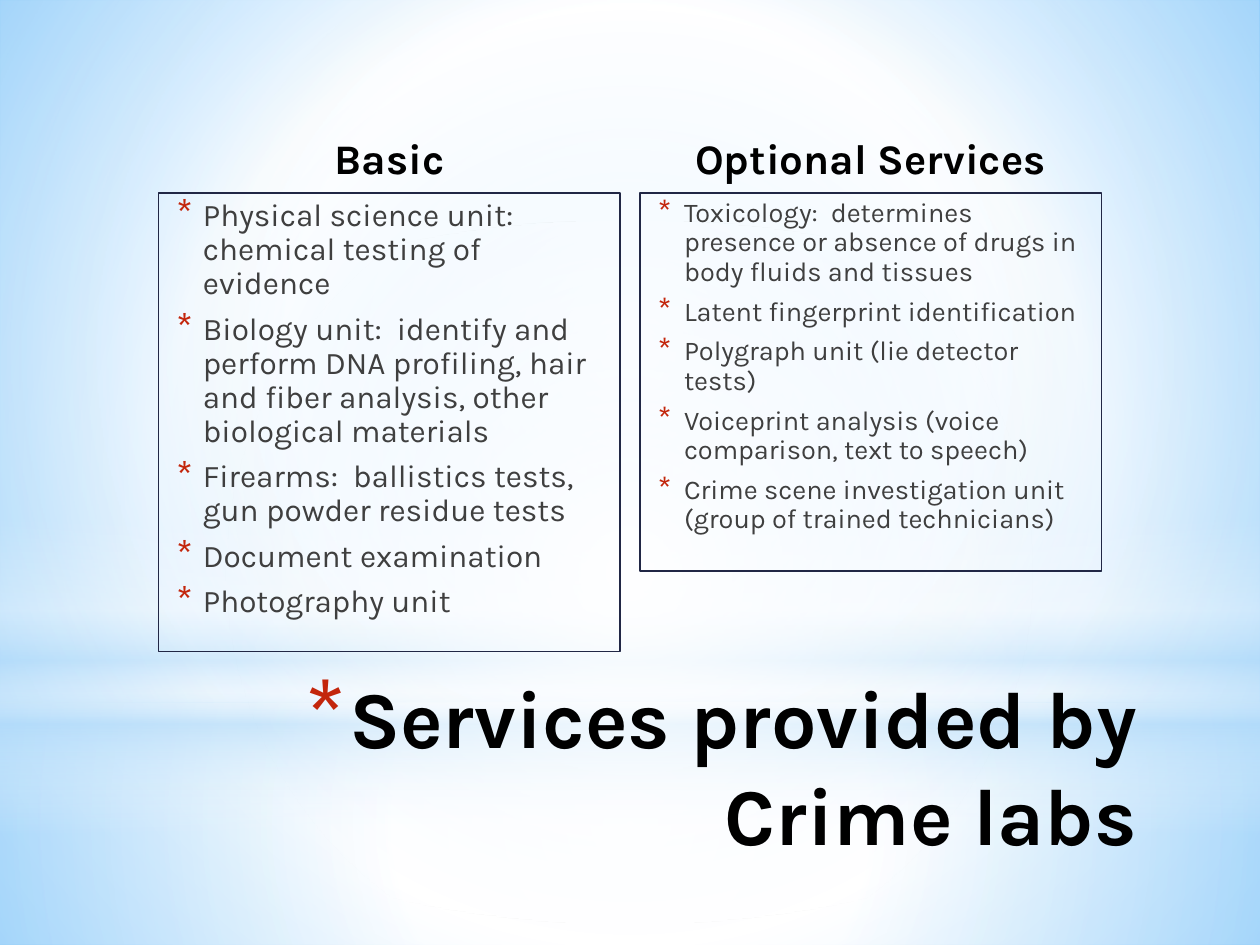
from lxml.etree import SubElement as Sub
from pptx import Presentation
from pptx.dml.color import RGBColor
from pptx.enum.shapes import MSO_SHAPE as SHAPE
from pptx.enum.text import MSO_ANCHOR as ANCHOR, PP_ALIGN as ALIGN
from pptx.oxml.ns import qn
from pptx.util import Cm, Pt

WIDTH, HEIGHT = 25.4, 19.05
HORIZON = 14.17
COLUMN_LEFTS, COLUMN_WIDTH = (3.2, 12.9), 9.3

COLUMNS = [
    dict(heading="Basic", height=9.25, size=18, before=6.6, bullet=130, items=[
        "Physical science unit:  chemical testing of evidence",
        "Biology unit:  identify and perform DNA profiling, hair and fiber "
        "analysis, other biological materials",
        "Firearms:  ballistics tests, gun powder residue tests",
        "Document examination",
        "Photography unit"]),
    dict(heading="Optional Services", height=7.62, size=15.5, before=6.1, bullet=126, items=[
        "Toxicology:  determines presence or absence of drugs in body fluids and tissues",
        "Latent fingerprint identification",
        "Polygraph unit (lie detector tests)",
        "Voiceprint analysis (voice comparison, text to speech)",
        "Crime scene investigation unit (group of trained technicians)"]),
]


def rgb(value):
    return RGBColor.from_string(value)


def set_all(target, values):
    for name, value in values.items():
        setattr(target, name, value)


def set_gradient(fill, parent, stops, angle=None):
    """Fill with (position, colour, opacity) stops; circular unless an angle is given."""
    fill.solid()
    solid = parent.find(qn("a:solidFill"))
    grad = parent.makeelement(qn("a:gradFill"), {"rotWithShape": "1"})
    stop_list = Sub(grad, qn("a:gsLst"))
    for position, color, opacity in stops:
        stop = Sub(stop_list, qn("a:gs"), pos=str(position * 1000))
        clr = Sub(stop, qn("a:srgbClr"), val=color)
        if opacity < 100:
            Sub(clr, qn("a:alpha"), val=str(opacity * 1000))
    if angle is None:
        circle = Sub(grad, qn("a:path"), {"path": "circle"})
        Sub(circle, qn("a:fillToRect"), {side: "50000" for side in "ltrb"})
    else:
        Sub(grad, qn("a:lin"), ang=str(angle * 60000), scaled="0")
    parent.replace(solid, grad)


def set_bullet(p, percent, left, hanging):
    pPr = p._p.get_or_add_pPr()
    pPr.set("marL", str(Cm(left)))
    pPr.set("indent", str(-Cm(hanging)))
    Sub(Sub(pPr, qn("a:buClr")), qn("a:srgbClr"), val=Deck.ACCENT)
    Sub(pPr, qn("a:buSzPct"), val=str(percent * 1000))
    Sub(pPr, qn("a:buFont"), typeface=Deck.FONT)
    Sub(pPr, qn("a:buChar"), char="*")


class Deck:
    FONT, ACCENT, BORDER = "Karla", "C3260C", "212745"
    HEADING, BODY = "000000", "3F3F3F"

    def __init__(self, prs):
        self.s = prs.slides.add_slide(prs.slide_layouts[6])

    def background(self, stops):
        fill = self.s.background.fill
        fill.solid()
        set_gradient(fill, self.s._element.find(".//" + qn("p:bgPr")), stops)

    def glow(self, kind, top, height, stops, angle=None):
        """Add a borderless gradient shape across the slide."""
        sp = self.s.shapes.add_shape(kind, 0, Cm(top), Cm(WIDTH), Cm(height))
        sp.shadow.inherit = False
        sp.line.fill.background()
        set_gradient(sp.fill, sp._element.spPr, stops, angle)

    def text(self, box, items, font, para, anchor=ANCHOR.TOP, bullet=None):
        sp = self.s.shapes.add_textbox(*map(Cm, box))
        tf = sp.text_frame
        set_all(tf, dict(word_wrap=True, vertical_anchor=anchor))
        for i, item in enumerate(items):
            p = tf.add_paragraph() if i else tf.paragraphs[0]
            set_all(p, para)
            if i == 0:
                p.space_before = Pt(0)
            if bullet:
                set_bullet(p, *bullet)
            r = p.add_run()
            r.text = item
            set_all(r.font, dict(name=self.FONT, size=Pt(font["size"]), bold=font["bold"]))
            r.font.color.rgb = rgb(font["color"])
        return sp

    def heading(self, left, text):
        self.text((left, 2.03, COLUMN_WIDTH, 1.78), [text],
                  dict(size=24, bold=True, color=self.HEADING),
                  dict(alignment=ALIGN.CENTER, space_after=Pt(3)), ANCHOR.BOTTOM)

    def bullet_box(self, left, column):
        sp = self.text((left, 3.89, COLUMN_WIDTH, column["height"]), column["items"],
                       dict(size=column["size"], bold=False, color=self.BODY),
                       dict(line_spacing=0.9, space_before=Pt(column["before"])),
                       bullet=(column["bullet"], 0.64, 0.53))
        sp.line.color.rgb = rgb(self.BORDER)
        sp.line.width = Pt(0.75)

    def title(self, text):
        self.text((5.08, 13.34, 18.08, 3.18), [text],
                  dict(size=46, bold=True, color=self.HEADING),
                  dict(alignment=ALIGN.RIGHT), bullet=(128, 0.89, 0.89))


def main():
    prs = Presentation()
    prs.slide_width, prs.slide_height = Cm(WIDTH), Cm(HEIGHT)
    deck = Deck(prs)

    white, sky = "FFFFFF", "B4DCFA"
    deck.background([(0, "A7D9FF", 100), (60, white, 100), (100, "69BDFC", 100)])
    deck.glow(SHAPE.RECTANGLE, HORIZON, HEIGHT - HORIZON,
              [(0, white, 91), (37, white, 76), (100, sky, 79)])
    deck.glow(SHAPE.RECTANGLE, 0, HORIZON,
              [(0, white, 89), (48, white, 62), (100, sky, 79)])
    deck.glow(SHAPE.RECTANGLE, 10.46, 6.35,
              [(0, white, 0), (29, white, 30), (45, sky, 40),
               (55, white, 26), (65, sky, 60), (100, white, 0)], angle=90)
    deck.glow(SHAPE.OVAL, 4.45, HORIZON,
              [(0, white, 100), (56, white, 0), (100, white, 0)])

    for left, column in zip(COLUMN_LEFTS, COLUMNS):
        deck.heading(left, column["heading"])
        deck.bullet_box(left, column)
    deck.title("Services provided by Crime labs")
    prs.save("out.pptx")


if __name__ == "__main__":
    main()
